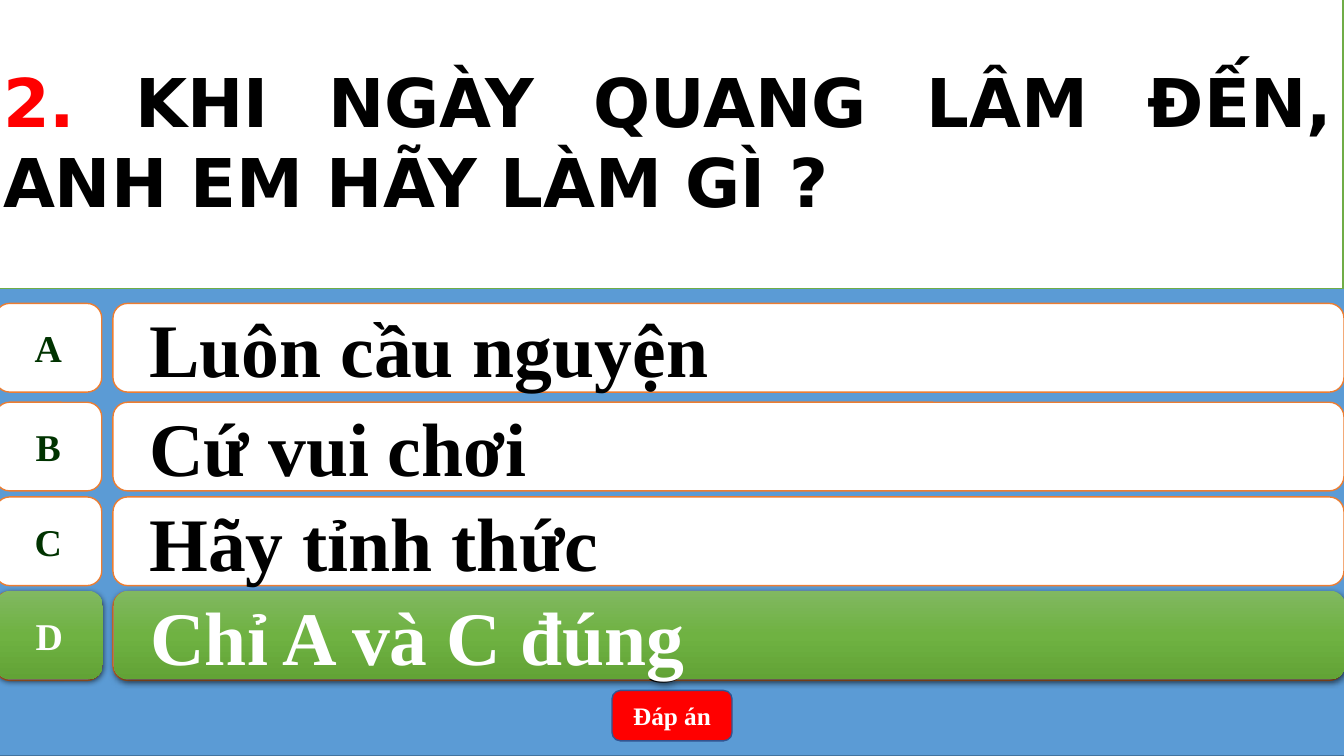
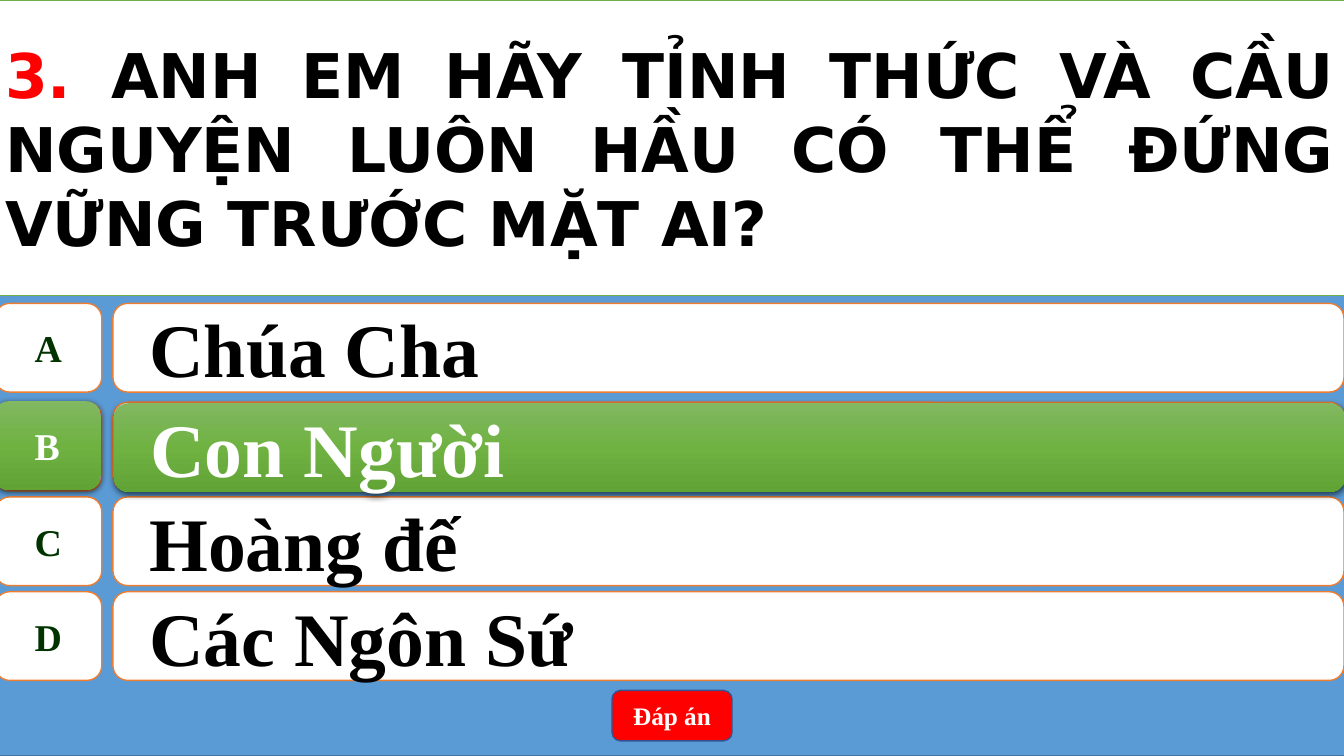
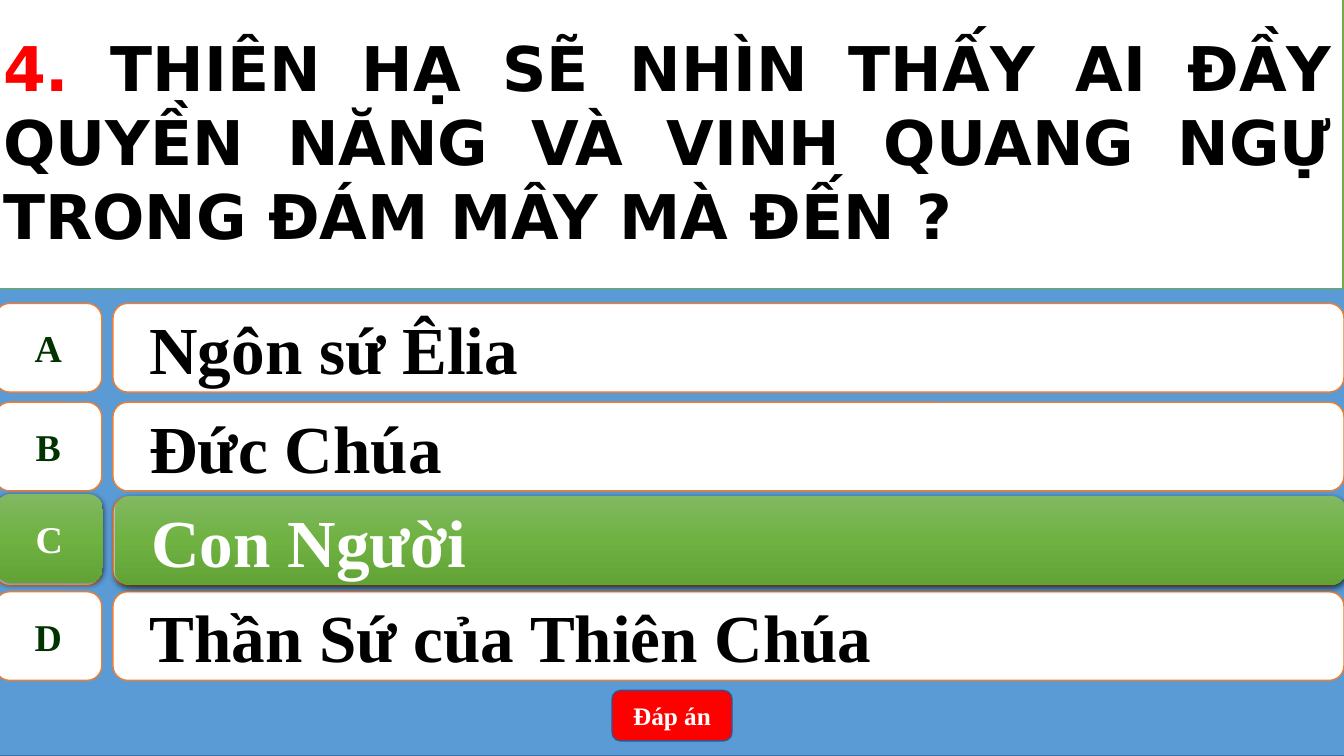
from copy import deepcopy

from lxml.etree import SubElement
from pptx import Presentation
from pptx.dml.color import RGBColor
from pptx.enum.shapes import MSO_SHAPE as Shape
from pptx.enum.text import MSO_ANCHOR as Anchor, MSO_AUTO_SIZE as AutoSize, PP_ALIGN as Align
from pptx.oxml.ns import qn
from pptx.util import Inches, Pt

WHITE = RGBColor(0xFF, 0xFF, 0xFF)
BLACK = RGBColor(0x00, 0x00, 0x00)
RED = RGBColor(0xFF, 0x00, 0x00)
BLUE = RGBColor(0x5B, 0x9B, 0xD5)
BLUE_EDGE = RGBColor(0x43, 0x73, 0x9E)
BUTTON_EDGE = RGBColor(0x32, 0x54, 0x91)
ORANGE = RGBColor(0xED, 0x7D, 0x31)
GREEN = RGBColor(0x70, 0xAD, 0x47)
DARK_GREEN = RGBColor(0x00, 0x33, 0x00)
CORRECT_STOPS = [
    (0, RGBColor(0x81, 0xB8, 0x61)),
    (0.5, RGBColor(0x6F, 0xB2, 0x42)),
    (1, RGBColor(0x62, 0xA3, 0x36)),
]
SERIF = "Times New Roman"
SANS = "DejaVu Sans"

LETTERS = "ABCD"
ROW_TOPS = [3.01, 3.99, 4.93, 5.87]
ROW_HEIGHT = 0.88
LETTER_LEFT, LETTER_WIDTH = -0.05, 1.06
ANSWER_LEFT, ANSWER_WIDTH = 1.12, 12.21
QUESTION_WIDTH, QUESTION_HEIGHT = 13.39, 2.93

QUIZ = [
    {
        "number": "2. ",
        "question": "KHI NGÀY QUANG LÂM ĐẾN, ANH EM HÃY LÀM GÌ ?",
        "question_size": 48,
        "question_at": (-0.07, -0.07),
        "answers": ["Luôn cầu nguyện", "Cứ vui chơi", "Hãy tỉnh thức", "Chỉ A và C đúng"],
        "answer_size": 54,
        "correct": "D",
        "correct_letter_at": (-0.04, 5.86),
        "correct_answer_at": (1.13, 5.86),
    },
    {
        "number": "3. ",
        "question": "ANH EM HÃY TỈNH THỨC VÀ CẦU NGUYỆN LUÔN HẦU CÓ THỂ ĐỨNG VỮNG TRƯỚC MẶT AI?",
        "question_size": 44,
        "question_at": (-0.05, 0),
        "answers": ["Chúa Cha", "Con Người", "Hoàng đế", "Các Ngôn Sứ"],
        "answer_size": 54,
        "correct": "B",
        "correct_letter_at": (-0.06, 3.98),
        "correct_answer_at": (1.13, 4),
    },
    {
        "number": "4. ",
        "question": "THIÊN HẠ SẼ NHÌN THẤY AI ĐẦY QUYỀN NĂNG VÀ VINH QUANG NGỰ TRONG ĐÁM MÂY MÀ ĐẾN ?",
        "question_size": 44,
        "question_at": (-0.07, -0.07),
        "answers": ["Ngôn sứ Êlia", "Đức Chúa", "Con Người", "Thần Sứ của Thiên Chúa"],
        "answer_size": 48,
        "correct": "C",
        "correct_letter_at": (-0.04, 4.9),
        "correct_answer_at": (1.14, 4.92),
    },
]


def write(shape, runs, size, font=SERIF, align=Align.CENTER, wrap=True, hanging=False):
    frame = shape.text_frame
    frame.auto_size = AutoSize.NONE
    frame.word_wrap = wrap
    frame.vertical_anchor = Anchor.MIDDLE
    paragraph = frame.paragraphs[0]
    paragraph.alignment = align
    if hanging:
        properties = paragraph._p.get_or_add_pPr()
        properties.set("marL", str(Inches(0.5)))
        properties.set("indent", str(Inches(-0.28)))
    for text, color in runs:
        run = paragraph.add_run()
        run.text = text
        run.font.name = font
        run.font.size = Pt(size)
        run.font.bold = True
        run.font.color.rgb = color


def paint(shape, fill, edge):
    shape.fill.solid()
    shape.fill.fore_color.rgb = fill
    shape.line.color.rgb = edge
    shape.line.width = Pt(1)


def paint_correct(shape):
    shape.fill.gradient()
    shape.fill.gradient_angle = 270
    stops = shape._element.spPr.find(".//" + qn("a:gsLst"))
    stops.insert(1, deepcopy(stops[0]))
    for stop, (position, color) in zip(shape.fill.gradient_stops, CORRECT_STOPS):
        stop.position = position
        stop.color.rgb = color
    shape.line.fill.background()
    effects = shape._element.spPr.find(qn("a:effectLst"))
    shadow = SubElement(effects, qn("a:outerShdw"), blurRad=str(Pt(4.5)), dist=str(Pt(1.5)),
                        dir="5400000", algn="ctr", rotWithShape="0")
    tint = SubElement(shadow, qn("a:srgbClr"), val=str(BLACK))
    SubElement(tint, qn("a:alpha"), val="63000")


def add_box(shapes, kind, left, top, width, height):
    box = shapes.add_shape(kind, Inches(left), Inches(top), Inches(width), Inches(height))
    box.shadow.inherit = False
    return box


def add_row(slide, letter, answer, size, letter_at, answer_at, correct=False):
    row = slide.shapes.add_group_shape().shapes
    letter_box = add_box(row, Shape.FLOWCHART_ALTERNATE_PROCESS, *letter_at, LETTER_WIDTH, ROW_HEIGHT)
    answer_box = add_box(row, Shape.ROUNDED_RECTANGLE, *answer_at, ANSWER_WIDTH, ROW_HEIGHT)
    for box in (letter_box, answer_box):
        if correct:
            paint_correct(box)
        else:
            paint(box, WHITE, ORANGE)
    write(letter_box, [(letter, WHITE if correct else DARK_GREEN)], 27, wrap=False)
    write(answer_box, [(answer, WHITE if correct else BLACK)], size, align=Align.LEFT, hanging=True)


def add_quiz_slide(deck, item):
    slide = deck.slides.add_slide(deck.slide_layouts[5])
    backdrop = add_box(slide.shapes, Shape.RECTANGLE, -0.05, 0, 13.39, 7.5)
    paint(backdrop, BLUE, BLUE_EDGE)

    size = item["answer_size"]
    for letter, answer, top in zip(LETTERS, item["answers"], ROW_TOPS):
        add_row(slide, letter, answer, size, (LETTER_LEFT, top), (ANSWER_LEFT, top))

    button = add_box(slide.shapes, Shape.ROUNDED_RECTANGLE, 6.07, 6.85, 1.19, 0.5)
    paint(button, RED, BUTTON_EDGE)
    write(button, [("Đáp án", WHITE)], 18)

    correct = item["correct"]
    add_row(slide, correct, item["answers"][LETTERS.index(correct)], size,
            item["correct_letter_at"], item["correct_answer_at"], correct=True)

    question = slide.shapes.title
    left, top = item["question_at"]
    question.left, question.top = Inches(left), Inches(top)
    question.width, question.height = Inches(QUESTION_WIDTH), Inches(QUESTION_HEIGHT)
    paint(question, WHITE, GREEN)
    write(question, [(item["number"], RED), (item["question"], BLACK)],
          item["question_size"], font=SANS, align=Align.JUSTIFY)
    slide.shapes._spTree.append(question._element)


def main():
    deck = Presentation()
    deck.slide_width, deck.slide_height = Inches(13.33), Inches(7.5)
    for item in QUIZ:
        add_quiz_slide(deck, item)
    deck.save("out.pptx")


if __name__ == "__main__":
    main()
